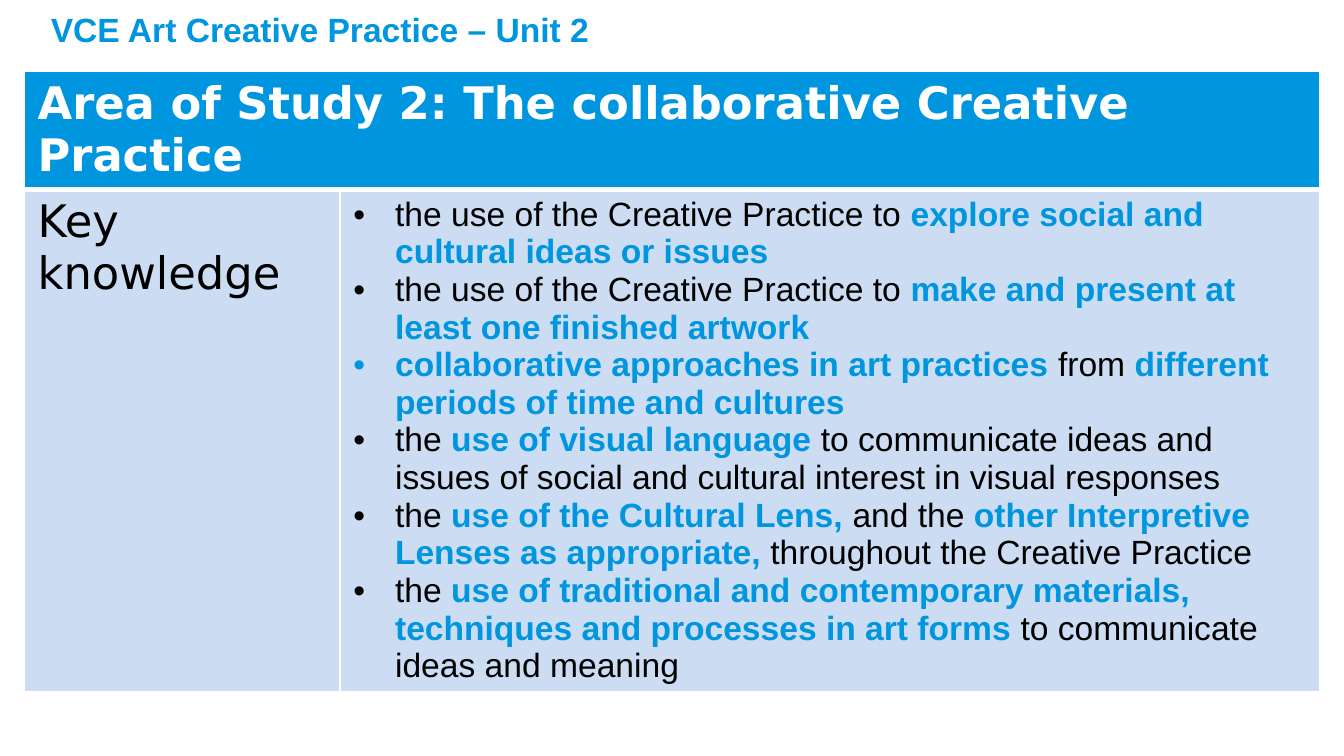
"""Build the Unit 2 key knowledge slide."""
from lxml import etree
from pptx import Presentation
from pptx.dml.color import RGBColor
from pptx.enum.text import MSO_AUTO_SIZE
from pptx.oxml.ns import qn
from pptx.util import Inches, Pt

BLUE = RGBColor(0x00, 0x96, 0xDF)
PALE_BLUE = RGBColor(0xCC, 0xDD, 0xF3)
WHITE = RGBColor(0xFF, 0xFF, 0xFF)
BLACK = RGBColor(0x00, 0x00, 0x00)
GROW_SHAPE = MSO_AUTO_SIZE.SHAPE_TO_FIT_TEXT

TITLE = "VCE Art Creative Practice – Unit 2"
HEADING = "Area of Study 2: The collaborative Creative Practice"
ROW_LABEL = "Key knowledge"
EMPHASIS = "*"
KEY_KNOWLEDGE = [
    "the use of the Creative Practice to *explore social and cultural ideas or issues*",
    "the use of the Creative Practice to *make and present at least one finished artwork*",
    "*collaborative approaches in art practices *from *different periods of time and cultures*",
    "the *use of visual language* to communicate ideas and issues of social and cultural "
    "interest in visual responses",
    "the *use of the Cultural Lens, *and the *other Interpretive Lenses as appropriate,* "
    "throughout the Creative Practice",
    "the *use of traditional and contemporary materials, techniques and processes in art "
    "forms *to communicate ideas and meaning",
]


class SlideBuilder:
    def __init__(self, slide):
        self.slide = slide
        self.body_font = "Arial"
        self.heading_font = "DejaVu Sans"
        self.body_size = 18
        self.heading_size = 24
        self.indent = Inches(0.31)

    def format_run(self, run, font_name, size, color, bold):
        run.font.name = font_name
        run.font.size = Pt(size)
        run.font.color.rgb = color
        run.font.bold = bold

    def add_title(self, text, left, top, width, height):
        box = self.slide.shapes.add_textbox(left, top, width, height)
        box.text_frame.word_wrap = True
        box.text_frame.auto_size = GROW_SHAPE
        box.text_frame.text = text
        run = box.text_frame.paragraphs[0].runs[0]
        self.format_run(run, self.body_font, self.body_size, BLUE, True)

    def add_table(self, left, top, height, column_widths, row_heights):
        frame = self.slide.shapes.add_table(
            len(row_heights), len(column_widths), left, top, sum(column_widths), height)
        table = frame.table
        for column, width in zip(table.columns, column_widths):
            column.width = width
        for row, row_height in zip(table.rows, row_heights):
            row.height = row_height
        frame.height = height
        return table

    def style_cell(self, cell, fill, top_width=1, bottom_width=1):
        cell.fill.solid()
        cell.fill.fore_color.rgb = fill
        properties = cell._tc.get_or_add_tcPr()
        edges = {"a:lnL": 1, "a:lnR": 1, "a:lnT": top_width, "a:lnB": bottom_width}
        for position, (tag, width) in enumerate(edges.items()):
            line = etree.Element(qn(tag), w=str(Pt(width)))
            line_fill = etree.SubElement(line, qn("a:solidFill"))
            etree.SubElement(line_fill, qn("a:srgbClr"), val=str(WHITE))
            properties.insert(position, line)

    def fill_heading(self, cell, text, color, bold):
        cell.text_frame.text = text
        run = cell.text_frame.paragraphs[0].runs[0]
        self.format_run(run, self.heading_font, self.heading_size, color, bold)

    def fill_bullets(self, cell, items):
        text_frame = cell.text_frame
        for index, item in enumerate(items):
            paragraph = text_frame.add_paragraph() if index else text_frame.paragraphs[0]
            properties = paragraph._p.get_or_add_pPr()
            properties.set("marL", str(self.indent))
            properties.set("indent", str(-self.indent))
            etree.SubElement(properties, qn("a:buFont"), typeface=self.body_font)
            etree.SubElement(properties, qn("a:buChar"), char="•")
            for part, text in enumerate(item.split(EMPHASIS)):
                if text:
                    run = paragraph.add_run()
                    run.text = text
                    strong = part % 2 == 1
                    self.format_run(run, self.body_font, self.body_size,
                                    BLUE if strong else BLACK, strong)


def main():
    presentation = Presentation()
    presentation.slide_width = Inches(10)
    presentation.slide_height = Inches(10 * 9 / 16)
    builder = SlideBuilder(presentation.slides.add_slide(presentation.slide_layouts[6]))

    table = builder.add_table(Inches(0.18), Inches(0.53), Inches(4.4),
                              [Inches(2.35), Inches(7.29)], [Inches(0.38), Inches(3.07)])
    for column in range(2):
        builder.style_cell(table.cell(0, column), BLUE, bottom_width=3)
        builder.style_cell(table.cell(1, column), PALE_BLUE, top_width=3)
    table.cell(0, 0).merge(table.cell(0, 1))
    builder.fill_heading(table.cell(0, 0), HEADING, WHITE, True)
    builder.fill_heading(table.cell(1, 0), ROW_LABEL, BLACK, False)
    builder.fill_bullets(table.cell(1, 1), KEY_KNOWLEDGE)

    builder.add_title(TITLE, Inches(0.28), Inches(0.02), Inches(7.59), Inches(0.4))
    presentation.save("out.pptx")


if __name__ == "__main__":
    main()
